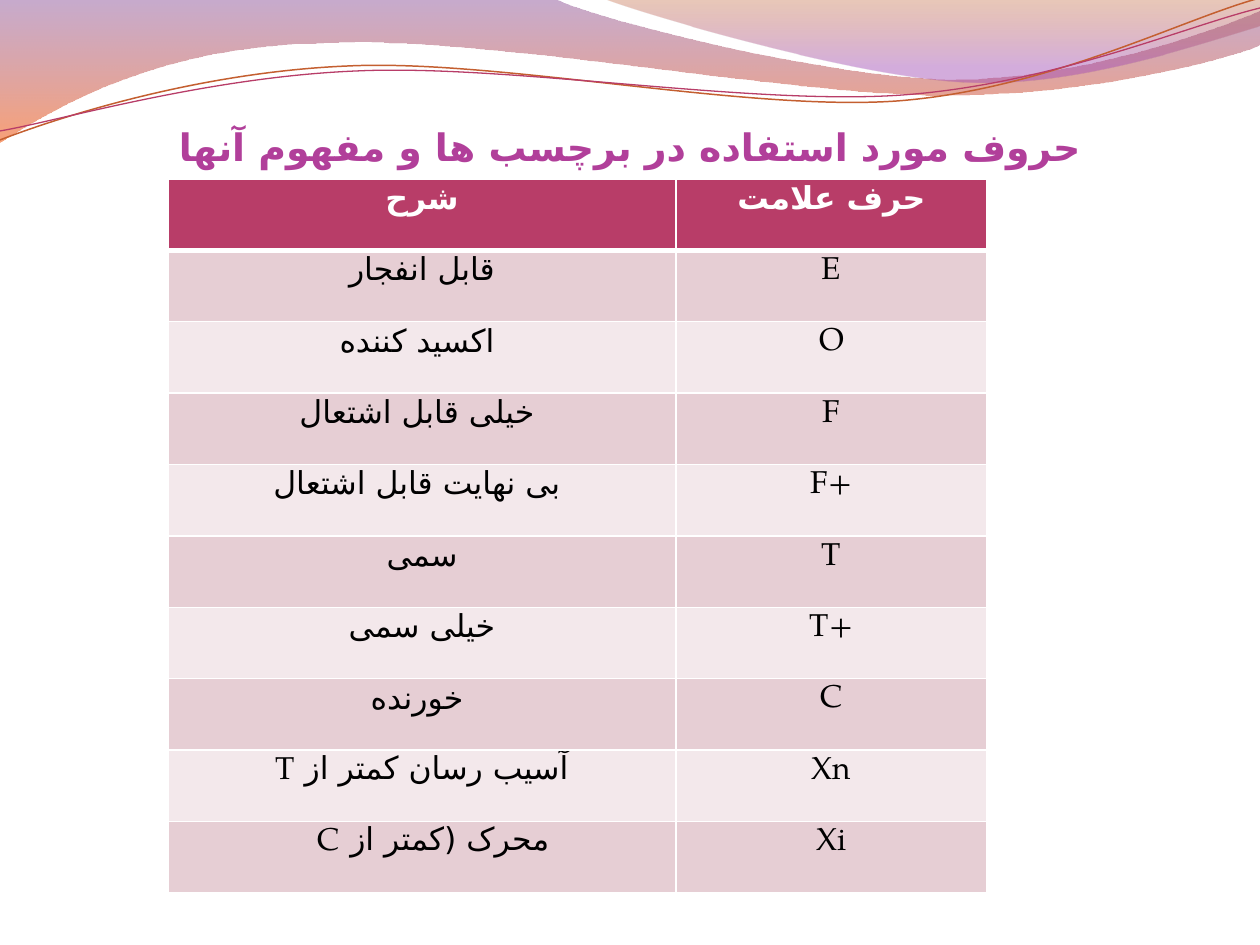
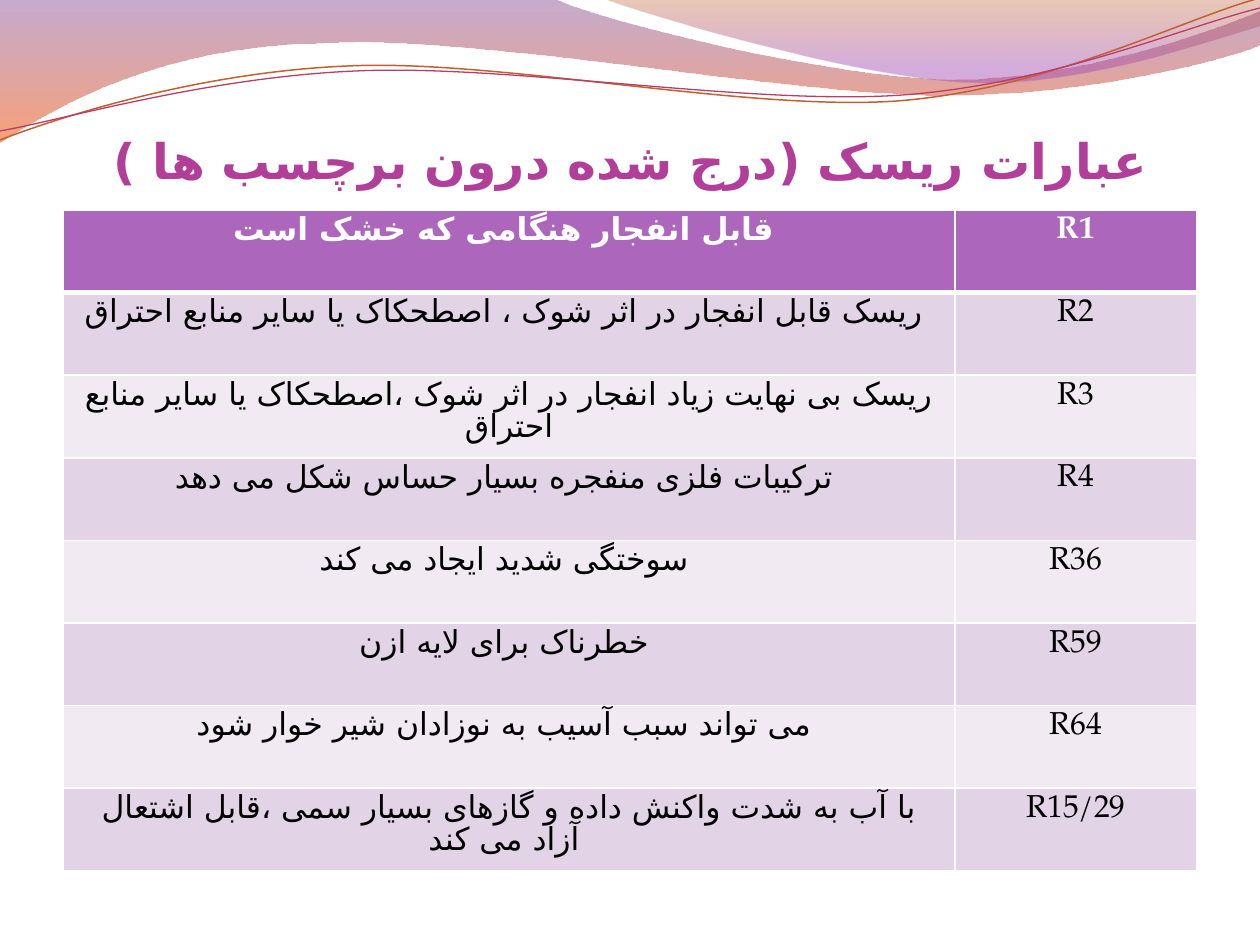
from lxml.etree import SubElement
from pptx import Presentation
from pptx.dml.color import RGBColor
from pptx.enum.lang import MSO_LANGUAGE_ID
from pptx.enum.text import MSO_ANCHOR, MSO_AUTO_SIZE, PP_ALIGN
from pptx.oxml import parse_xml
from pptx.oxml.ns import nsdecls, qn
from pptx.util import Pt

PX = 914400 // 126
WHITE = RGBColor(0xFF, 0xFF, 0xFF)
BLACK = RGBColor(0x00, 0x00, 0x00)
TITLE_COLOR = RGBColor(0xB1, 0x3F, 0x9A)
PLUM = RGBColor(0x83, 0x45, 0x91)
ORANGE = RGBColor(0xF3, 0x53, 0x07)
RUST = RGBColor(0xB7, 0x49, 0x15)
VIOLET = RGBColor(0xA1, 0x4B, 0xB4)
COPPER = RGBColor(0xC4, 0x5F, 0x30)
ROSE = RGBColor(0xB8, 0x3D, 0x68)
ROSE_BANDS = (RGBColor(0xE6, 0xCE, 0xD4), RGBColor(0xF3, 0xE8, 0xEB))
PURPLE = RGBColor(0xAC, 0x66, 0xBB)
PURPLE_BANDS = (RGBColor(0xE3, 0xD3, 0xE7), RGBColor(0xF1, 0xEA, 0xF3))
TITLE_FONT = "Arial"
TABLE_FONT = "TeX Gyre Pagella"
PERSIAN_FONT = "DejaVu Sans"

WAVES = (
    ((0, 0),
     [(554, -1), (600, 21, 837, 79, 955, 79), (1075, 79, 1207, 33, 1260, 11),
      (1260, 45), (1239, 55, 1096, 96, 940, 95), (784, 95, 481, 35, 324, 43),
      (163, 45, 58, 105, 0, 142)],
     ((0, PLUM, 45), (1, ORANGE, 55))),
    ((604, -1),
     [(641, 14, 859, 78, 969, 82), (1079, 87, 1211, 40, 1260, 26), (1260, -1)],
     ((0, RUST, 30), (0.8, VIOLET, 45))),
)
STRANDS = (
    ((0, 140),
     [(60, 117, 199, 72, 349, 66), (498, 59, 747, 112, 898, 101),
      (1050, 89, 1182, 19, 1260, -2)], COPPER, 0.85),
    ((0, 131),
     [(59, 121, 207, 77, 357, 71), (508, 64, 752, 106, 903, 95),
      (1053, 84, 1186, 26, 1260, 8)], ROSE, 0.75),
)

SYMBOL_ROWS = (
    ("شرح", "حرف علامت"),
    ("قابل انفجار", "E"),
    ("اکسید کننده ", "O"),
    ("خیلی قابل اشتعال ", "F"),
    ("بی نهایت قابل اشتعال ", "F+"),
    ("سمی", "T"),
    ("خیلی سمی", "T+"),
    ("خورنده ", "C"),
    ("آسیب رسان کمتر از T", "Xn"),
    ("محرک (کمتر از C", "Xi"),
)
RISK_ROWS = (
    ("قابل انفجار هنگامی که خشک است ", "R1"),
    ("ریسک قابل انفجار در اثر شوک ، اصطحکاک یا سایر منابع احتراق ", "R2"),
    ("ریسک بی نهایت زیاد انفجار در اثر شوک ،اصطحکاک یا سایر منابع احتراق", "R3"),
    ("ترکیبات فلزی منفجره بسیار حساس شکل می دهد ", "R4"),
    ("سوختگی شدید ایجاد می کند ", "R36"),
    ("خطرناک برای لایه ازن ", "R59"),
    ("می تواند سبب آسیب به نوزادان شیر خوار شود ", "R64"),
    ("با آب به شدت واکنش داده و گازهای بسیار سمی ،قابل اشتعال آزاد می کند ", "R15/29"),
)
IRRITANT = SYMBOL_ROWS[9][0]
MIXED_SCRIPT = {SYMBOL_ROWS[8][0], IRRITANT}


def write_text(frame, text, size, font, color, bold=False, rtl=False, spacing=None):
    para = frame.paragraphs[0]
    para.alignment = PP_ALIGN.CENTER
    if spacing:
        para.line_spacing = Pt(spacing)
    if rtl:
        para._p.get_or_add_pPr().set("rtl", "1")
    span = para.add_run()
    span.text = text
    span.font.size = Pt(size)
    span.font.name = font
    span.font.bold = bold
    span.font.color.rgb = color
    if not text.isascii():
        span.font.language_id = MSO_LANGUAGE_ID.FARSI
        SubElement(span.font._element, qn("a:cs")).set("typeface", PERSIAN_FONT)


def draw_outline(page, start, segments, closed):
    anchors = [start] + [segment[-2:] for segment in segments]
    left, top = (min(values) for values in zip(*anchors))
    builder = page.shapes.build_freeform(*start, scale=PX)
    builder.add_line_segments(anchors[1:], close=closed)
    shape = builder.convert_to_shape()
    shape.shadow.inherit = False
    edges = list(shape.element.spPr.iter(qn("a:lnTo")))
    for edge, segment in zip(edges, segments):
        if len(segment) == 6:
            edge.tag = qn("a:cubicBezTo")
            for index in (0, 2):
                control = parse_xml(f'<a:pt {nsdecls("a")} x="{segment[index] - left}" '
                                    f'y="{segment[index + 1] - top}"/>')
                edge.insert(index // 2, control)
    return shape


def draw_wave(page, start, segments, stops):
    wave = draw_outline(page, start, segments, True)
    wave.line.fill.background()
    wave.fill.gradient()
    wave.fill.gradient_angle = 270
    for stop, (position, color, _) in zip(wave.fill.gradient_stops, stops):
        stop.position = position
        stop.color.rgb = color
    colors = wave.element.spPr.iter(qn("a:srgbClr"))
    for color, (_, _, opacity) in zip(list(colors), stops):
        SubElement(color, qn("a:alpha")).set("val", str(opacity * 1000))
    return wave


def draw_strand(page, start, segments, color, width):
    strand = draw_outline(page, start, segments, False)
    strand.fill.background()
    strand.line.color.rgb = color
    strand.line.width = Pt(width)
    return strand


def decorate_layout(page):
    band = [draw_wave(page, *wave) for wave in WAVES]
    band += [draw_strand(page, *strand) for strand in STRANDS]
    tree = page.slide_layout.shapes.element
    for index, shape in enumerate(band, start=2):
        tree.insert(index, shape.element)


def place_title(page, text, box, size):
    title = page.shapes.title
    title.left, title.top, title.width, title.height = [n * PX for n in box]
    frame = title.text_frame
    frame.auto_size = MSO_AUTO_SIZE.NONE
    frame.word_wrap = True
    frame.vertical_anchor = MSO_ANCHOR.BOTTOM
    frame.margin_left = frame.margin_right = frame.margin_bottom = 0
    frame.margin_top = 6 * PX
    write_text(frame, text, size, TITLE_FONT, TITLE_COLOR, bold=True)


def set_borders(cell, top, bottom):
    properties = cell._tc.get_or_add_tcPr()
    widths = (("lnL", 1), ("lnR", 1), ("lnT", top), ("lnB", bottom))
    for index, (side, width) in enumerate(widths):
        properties.insert(index, parse_xml(
            f'<a:{side} {nsdecls("a")} w="{Pt(width)}"><a:solidFill>'
            f'<a:srgbClr val="{WHITE}"/></a:solidFill></a:{side}>'))


def place_table(page, rows, box, column_widths, header_color, bands):
    left, top, width, height = [n * PX for n in box]
    table = page.shapes.add_table(len(rows), 2, left, top, width, height).table
    for column, column_width in zip(table.columns, column_widths):
        column.width = column_width * PX
    for row_index, texts in enumerate(rows):
        table.rows[row_index].height = height // len(rows)
        header = row_index == 0
        for column_index, text in enumerate(texts):
            cell = table.cell(row_index, column_index)
            cell.fill.solid()
            cell.fill.fore_color.rgb = header_color if header else bands[(row_index - 1) % 2]
            set_borders(cell, 3 if row_index == 1 else 1, 3 if header else 1)
            if text == IRRITANT:
                cell.margin_left = 36 * PX
            write_text(cell.text_frame, text, 18, TABLE_FONT, WHITE if header else BLACK,
                       bold=header, rtl=text in MIXED_SCRIPT,
                       spacing=None if text.isascii() else 18)


def main():
    deck = Presentation()
    deck.slide_width, deck.slide_height = 1260 * PX, 945 * PX
    layout = deck.slide_layouts[5]

    symbols = deck.slides.add_slide(layout)
    decorate_layout(symbols)
    place_title(symbols, "حروف مورد استفاده در برچسب ها و مفهوم آنها", (63, 116, 1134, 53), 21.6)
    place_table(symbols, SYMBOL_ROWS, (168, 179, 819, 714), (508, 311), ROSE, ROSE_BANDS)

    risks = deck.slides.add_slide(layout)
    place_title(risks, "عبارات ریسک (درج شده درون برچسب ها )", (63, 97, 1134, 92), 28)
    place_table(risks, RISK_ROWS, (63, 210, 1134, 661), (892, 242), PURPLE, PURPLE_BANDS)

    deck.save("out.pptx")


if __name__ == "__main__":
    main()
